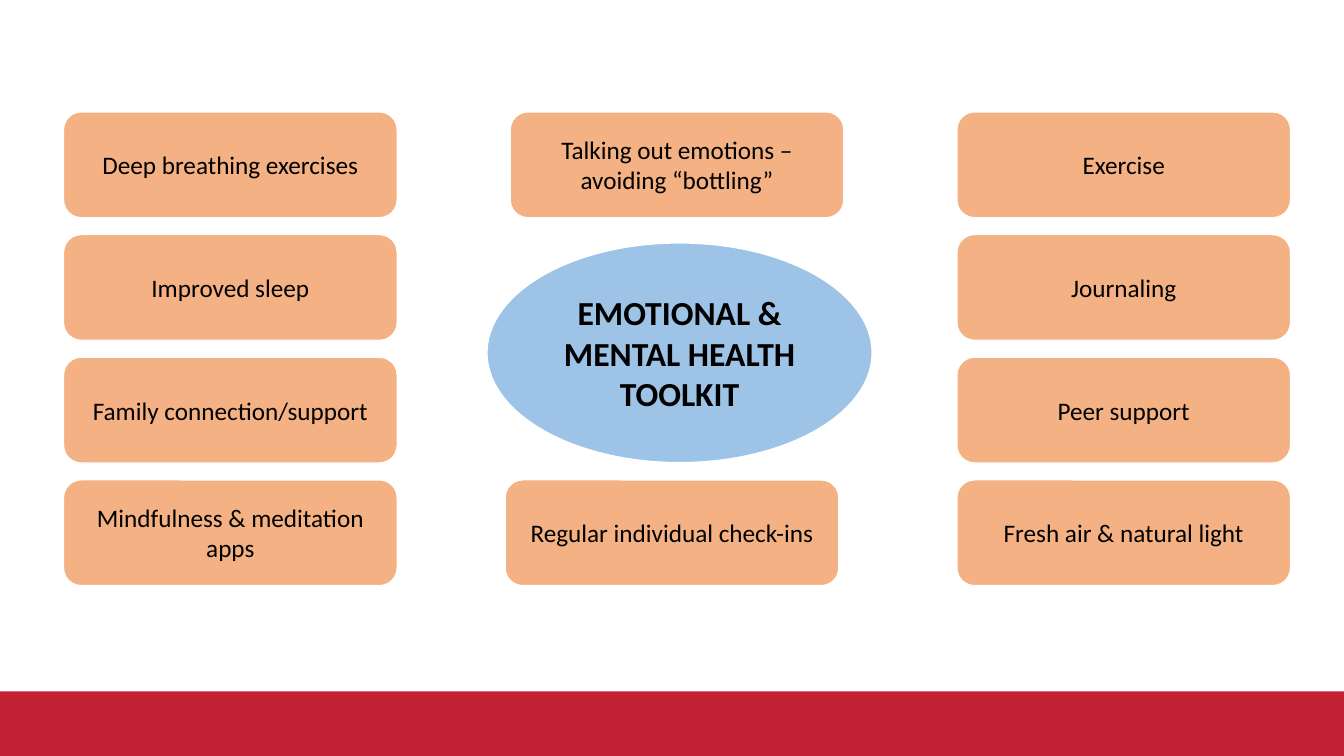
from dataclasses import dataclass

from pptx import Presentation
from pptx.dml.color import RGBColor
from pptx.enum import shapes, text
from pptx.util import Inches, Pt


@dataclass(frozen=True)
class Theme:
    font: str = "Calibri"
    ink: str = "000000"
    edge: str = "FFFFFF"
    band: str = "C22033"
    card: str = "F4B183"
    hub: str = "9DC3E6"
    body: int = 18
    head: int = 24


THEME = Theme()
KIND = shapes.MSO_SHAPE

# Card grid, in inches
CARD_W, CARD_H = 3.31, 1.05
TOP, STEP = 1.11, 1.2167
LEFT_X, RIGHT_X = 0.63, 9.49

LEFT = ["Deep breathing exercises", "Improved sleep",
        "Family connection/support", "Mindfulness & meditation apps"]
RIGHT = ["Exercise", "Journaling", "Peer support",
         "Fresh air & natural light"]


def add_shape(slide, kind, box, fill):
    shape = slide.shapes.add_shape(kind, *(Inches(n) for n in box))
    shape.shadow.inherit = False
    shape.fill.solid()
    shape.fill.fore_color.rgb = RGBColor.from_string(fill)
    shape.line.fill.background()
    return shape


def add_label(slide, kind, box, fill, words, size, bold=False):
    shape = add_shape(slide, kind, box, fill)
    shape.line.color.rgb = RGBColor.from_string(THEME.edge)
    shape.line.width = Pt(1)
    frame = shape.text_frame
    frame.word_wrap = True
    frame.vertical_anchor = text.MSO_ANCHOR.MIDDLE
    para = frame.paragraphs[0]
    para.text = words
    para.alignment = text.PP_ALIGN.CENTER
    para.font.name = THEME.font
    para.font.size = Pt(size)
    para.font.bold = bold
    para.font.color.rgb = RGBColor.from_string(THEME.ink)


def add_card(slide, x, row, words):
    box = (x, TOP + row * STEP, CARD_W, CARD_H)
    add_label(slide, KIND.ROUNDED_RECTANGLE, box, THEME.card, words,
              THEME.body)


def main():
    deck = Presentation()
    deck.slide_width, deck.slide_height = Inches(13.33), Inches(7.5)
    slide = deck.slides.add_slide(deck.slide_layouts.get_by_name("Blank"))

    # Footer band
    add_shape(slide, KIND.RECTANGLE, (0, 6.86, 13.33, 0.64), THEME.band)

    # Side columns
    for x, items in ((LEFT_X, LEFT), (RIGHT_X, RIGHT)):
        for row, words in enumerate(items):
            add_card(slide, x, row, words)

    # Cards above and below the hub
    add_card(slide, 5.06, 0, "Talking out emotions –avoiding “bottling”")
    add_card(slide, 5.01, 3, "Regular individual check-ins")

    # Hub
    add_label(slide, KIND.OVAL, (4.83, 2.41, 3.82, 2.18), THEME.hub,
              "EMOTIONAL & MENTAL HEALTH\nTOOLKIT", THEME.head, bold=True)

    deck.save("out.pptx")


if __name__ == "__main__":
    main()
